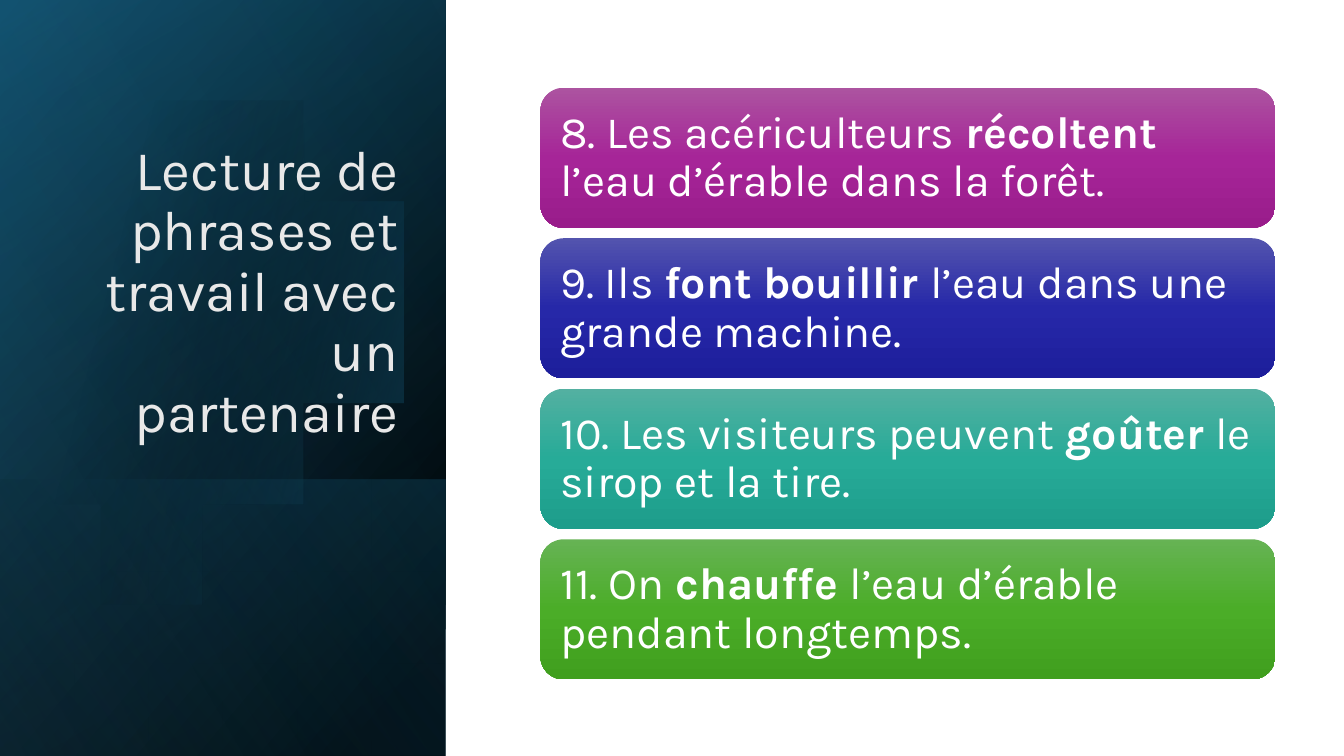
from math import cos, radians, sin

from pptx import Presentation
from pptx.dml.color import RGBColor
from pptx.enum.shapes import MSO_SHAPE
from pptx.enum.text import MSO_ANCHOR, MSO_AUTO_SIZE, PP_ALIGN
from pptx.oxml.ns import qn
from pptx.util import Inches, Pt
from lxml import etree

RECT = MSO_SHAPE.RECTANGLE
ROUND = MSO_SHAPE.ROUNDED_RECTANGLE
MIDDLE, BOTTOM = MSO_ANCHOR.MIDDLE, MSO_ANCHOR.BOTTOM
LEFT, RIGHT = PP_ALIGN.LEFT, PP_ALIGN.RIGHT
FIXED = MSO_AUTO_SIZE.NONE

FONT = "Karla"
WHITE = RGBColor(0xFF, 0xFF, 0xFF)
PALE = RGBColor(0xE8, 0xE8, 0xE8)
BLACK = RGBColor(0x00, 0x00, 0x00)
NAVY = RGBColor(0x10, 0x48, 0x62)
TEAL = RGBColor(0x15, 0x60, 0x82)
SKY = RGBColor(0x46, 0xB1, 0xE1)
PLUM = [RGBColor(0xAC, 0x53, 0xA0), RGBColor(0xA6, 0x25, 0x98), RGBColor(0x99, 0x1C, 0x8B)]
BLUE = [RGBColor(0x53, 0x54, 0xAE), RGBColor(0x26, 0x28, 0xA8), RGBColor(0x1D, 0x1E, 0x9B)]
MINT = [RGBColor(0x53, 0xB0, 0xA1), RGBColor(0x27, 0xAB, 0x98), RGBColor(0x1D, 0x9D, 0x8B)]
GREEN = [RGBColor(0x66, 0xB3, 0x54), RGBColor(0x4B, 0xAD, 0x28), RGBColor(0x40, 0x9F, 0x1E)]


def paint(shape, stops, angle):
    """Fill with a gradient of (position, colour, opacity) in percent; angle is clockwise."""
    shape.shadow.inherit = False
    shape.line.fill.background()
    shape.fill.gradient()
    shape.fill.gradient_angle = 360 - angle
    group = shape._element.spPr.find(".//" + qn("a:gsLst"))
    for old in list(group):
        group.remove(old)
    for pos, color, alpha in stops:
        stop = etree.SubElement(group, qn("a:gs"), pos=str(pos * 1000))
        tint = etree.SubElement(stop, qn("a:srgbClr"), val=str(color))
        if alpha < 100:
            etree.SubElement(tint, qn("a:alpha"), val=str(alpha * 1000))


def style(run, size, color, bold=False):
    run.font.name = FONT
    run.font.size = Pt(size)
    run.font.bold = bold
    run.font.color.rgb = color


prs = Presentation()
prs.slide_width, prs.slide_height = Inches(13.33), Inches(7.5)
slide = prs.slides.add_slide(prs.slide_layouts[5])
shapes = slide.shapes

# Side panel: turned gradient layers, with a disc below the last one
FULL = (-1.54, 1.54, 7.5, 4.42)
FOOT = (0.84, 3.92, 2.74, 4.42)
layers = [
    (FULL, [(8, BLACK, 100), (100, NAVY, 100)], 50),
    (FULL, [(0, BLACK, 0), (99, TEAL, 46)], 30),
    (FOOT, [(2, TEAL, 29), (100, BLACK, 30)], 130),
    (FULL, [(0, BLACK, 0), (99, SKY, 11)], 120),
]
for i, (box, stops, angle) in enumerate(layers):
    if i == 3:
        # Disc cut off at the left edge
        arc = [(1.45 + 2.28 * cos(radians(a)), 3.38 + 2.28 * sin(radians(a)))
               for a in range(-135, 136, 3)]
        pen = shapes.build_freeform(*arc[0], scale=Inches(1))
        pen.add_line_segments(arc[1:], close=True)
        paint(pen.convert_to_shape(), [(29, BLACK, 0), (100, TEAL, 43)], 14)
    layer = shapes.add_shape(RECT, *map(Inches, box))
    layer.rotation = 90
    layer._element.spPr.find(qn("a:xfrm")).set("flipH", "1")
    paint(layer, stops, angle)

# Title, brought in front of the panel
title = shapes.title
title.left, title.top = Inches(0.64), Inches(1.84)
title.width, title.height = Inches(3.41), Inches(2.62)
frame = title.text_frame
frame.text = "Lecture de phrases et travail avec un partenaire"
frame.word_wrap = True
frame.auto_size = FIXED
frame.vertical_anchor = BOTTOM
para = frame.paragraphs[0]
para.alignment = RIGHT
para.line_spacing = 0.9
style(para.runs[0], 40, PALE)
title._element.getparent().append(title._element)

# Sentence cards: start, bold verb, end
cards = [
    (PLUM, "8. Les acériculteurs ", "récoltent ", "l’eau d’érable dans la forêt."),
    (BLUE, "9. Ils ", "font bouillir ", "l’eau dans une grande machine."),
    (MINT, "10. Les visiteurs peuvent ", "goûter", " le sirop et la tire."),
    (GREEN, "11. On ", "chauffe ", "l’eau d’érable pendant longtemps."),
]
STEP = (5.35 - 0.87) / 3
for i, (shades, *parts) in enumerate(cards):
    card = shapes.add_shape(ROUND, Inches(5.36), Inches(0.87 + i * STEP),
                            Inches(7.29), Inches(1.39))
    paint(card, [(pos, shade, 100) for pos, shade in zip((0, 50, 100), shades)], 90)
    frame = card.text_frame
    frame.word_wrap = True
    frame.vertical_anchor = MIDDLE
    frame.margin_left = frame.margin_right = Inches(0.13)
    frame.margin_top = frame.margin_bottom = Inches(0.13)
    para = frame.paragraphs[0]
    para.alignment = LEFT
    para.line_spacing = 0.9
    for k, part in enumerate(parts):
        run = para.add_run()
        run.text = part
        style(run, 32, WHITE, k == 1)

prs.save("out.pptx")
